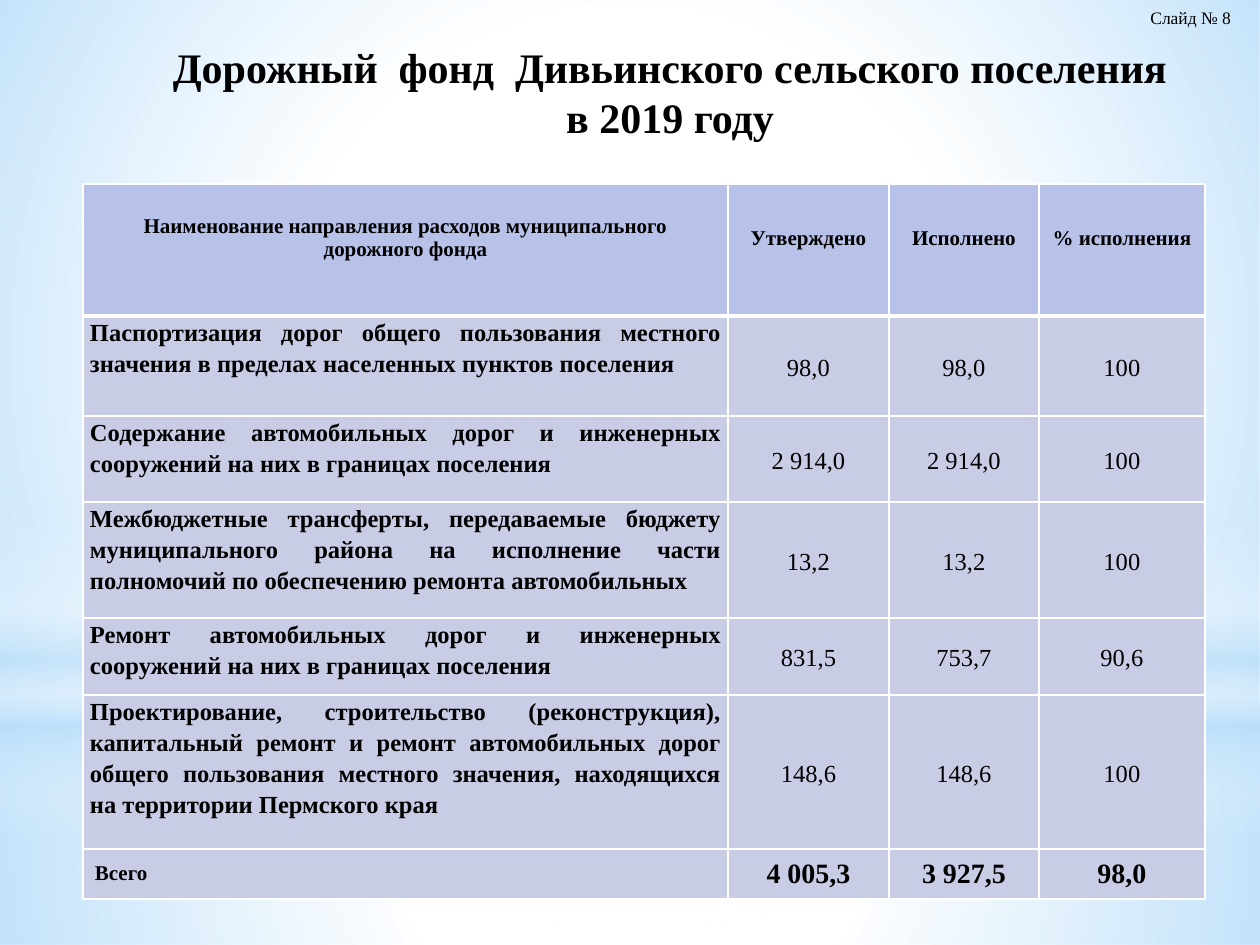
from lxml import etree
from pptx import Presentation
from pptx import util as u
from pptx.dml.color import RGBColor
from pptx.enum import shapes, text
from pptx.oxml import parse_xml
from pptx.oxml.ns import nsdecls

SCALE = 914400 / 126
FONT = "Times New Roman"
WHITE, SKY, BLACK = "FFFFFF", "B4DCFA", "000000"
HEAD_FILL, BODY_FILL = "B8C2E9", "C8CDE5"
RECT, OVAL = shapes.MSO_SHAPE.RECTANGLE, shapes.MSO_SHAPE.OVAL
CENTER, LEFT, JUSTIFY = text.PP_ALIGN.CENTER, text.PP_ALIGN.LEFT, text.PP_ALIGN.JUSTIFY

CIRCLE = '<a:path path="circle"><a:fillToRect l="50000" t="50000" r="50000" b="50000"/></a:path>'
DOWN = '<a:lin ang="5400000" scaled="0"/>'

BACKDROP = [
    (RECT, (0, 703, 1260, 242), CIRCLE, [(0, WHITE, 91), (37, WHITE, 76), (100, SKY, 79)]),
    (RECT, (0, 0, 1260, 703), CIRCLE, [(0, WHITE, 89), (48, WHITE, 62), (100, SKY, 79)]),
    (RECT, (0, 519, 1260, 315), DOWN, [(0, WHITE, 0), (29, WHITE, 30), (45, SKY, 40),
                                       (55, WHITE, 26), (65, SKY, 60), (100, WHITE, 0)]),
    (OVAL, (0, 220, 1260, 703), CIRCLE, [(0, WHITE, 100), (56, WHITE, 0)]),
]

CAPTIONS = [
    ("Дорожный  фонд  Дивьинского сельского поселения в 2019 году",
     (144, 35, 1052, 115), 24, True, CENTER),
    ("Слайд № 8", (1138, 1, 122, 34), 10, False, LEFT),
]

HEADER = ("Наименование направления расходов муниципального дорожного фонда",
          "Утверждено", "Исполнено", "% исполнения")
EXPENSES = [
    ("Паспортизация дорог общего пользования местного значения в пределах "
     "населенных пунктов поселения", "98,0", "98,0", "100"),
    ("Содержание автомобильных дорог и инженерных сооружений на них в границах поселения",
     "2 914,0", "2 914,0", "100"),
    ("Межбюджетные трансферты, передаваемые бюджету муниципального района на исполнение "
     "части полномочий по обеспечению ремонта автомобильных", "13,2", "13,2", "100"),
    ("Ремонт автомобильных дорог и инженерных сооружений на них в границах поселения",
     "831,5", "753,7", "90,6"),
    ("Проектирование, строительство (реконструкция), капитальный ремонт и ремонт "
     "автомобильных дорог общего пользования местного значения, находящихся на территории "
     "Пермского края", "148,6", "148,6", "100"),
]
TOTAL = ("Всего", "4 005,3", "3 927,5", "98,0")
TABLE_LEFT, TABLE_TOP = 83, 184
COLUMNS = [645, 161, 150, 166]
ROWS = [132, 100, 86, 116, 77, 154, 50]


def px(n):
    return u.Emu(round(n * SCALE))


def color(value):
    return RGBColor.from_string(value)


def style(paragraph, size, bold, align):
    paragraph.alignment = align
    font = paragraph.font
    font.name, font.size, font.bold = FONT, u.Pt(size), bold
    font.color.rgb = color(BLACK)


def add_glow(slide, kind, box, direction, stops):
    glow = slide.shapes.add_shape(kind, *map(px, box))
    glow.shadow.inherit = False
    glow.line.fill.background()
    stop_xml = "".join(
        f'<a:gs pos="{at * 1000}"><a:srgbClr val="{value}"><a:alpha val="{alpha * 1000}"/>'
        f'</a:srgbClr></a:gs>' for at, value, alpha in stops)
    gradient = parse_xml(f'<a:gradFill {nsdecls("a")} rotWithShape="1">'
                         f'<a:gsLst>{stop_xml}</a:gsLst>{direction}</a:gradFill>')
    glow.fill.background()
    properties = glow.element.spPr
    properties.replace(properties.find("{*}noFill"), gradient)


def add_caption(slide, words, box, size, bold, align):
    frame = slide.shapes.add_textbox(*map(px, box)).text_frame
    frame.word_wrap = True
    frame.text = words
    style(frame.paragraphs[0], size, bold, align)


def add_borders(cell, top, bottom):
    widths = {"lnL": 1, "lnR": 1, "lnT": top, "lnB": bottom}
    for place, (side, width) in enumerate(widths.items()):
        border = parse_xml(f'<a:{side} {nsdecls("a")} w="{width * 12700}"><a:solidFill>'
                           f'<a:srgbClr val="{WHITE}"/></a:solidFill></a:{side}>')
        cell._tc.get_or_add_tcPr().insert(place, border)


def fill_cell(cell, words, row, column):
    header, total = row == 0, row == len(ROWS) - 1
    name = column == 0
    cell.text = words
    cell.fill.solid()
    cell.fill.fore_color.rgb = color(HEAD_FILL if header else BODY_FILL)
    add_borders(cell, 3 if row == 1 else 1, 3 if header else 1)
    paragraph = cell.text_frame.paragraphs[0]
    cell.vertical_anchor = text.MSO_ANCHOR.MIDDLE
    side, top, bottom = 12, 6, 6
    if header:
        size, bold, align, bottom = 12, True, CENTER, 30
    elif total:
        size, bold, align = (12, True, LEFT) if name else (16, True, CENTER)
    else:
        size, bold, align = 14, name, JUSTIFY if name else CENTER
        side, top, bottom = 7, 0, 0
        paragraph.line_spacing = 1.15
        if name:
            cell.vertical_anchor = text.MSO_ANCHOR.TOP
    cell.margin_left = cell.margin_right = px(side)
    cell.margin_top, cell.margin_bottom = px(top), px(bottom)
    style(paragraph, size, bold, align)


def add_fund_table(slide):
    fund = slide.shapes.add_table(len(ROWS), len(COLUMNS), px(TABLE_LEFT), px(TABLE_TOP),
                                  px(sum(COLUMNS)), px(sum(ROWS))).table
    for column, width in zip(fund.columns, COLUMNS):
        column.width = px(width)
    for row, height in zip(fund.rows, ROWS):
        row.height = px(height)
    for r, entries in enumerate([HEADER, *EXPENSES, TOTAL]):
        for c, words in enumerate(entries):
            fill_cell(fund.cell(r, c), words, r, c)


def main():
    deck = Presentation()
    deck.slide_width, deck.slide_height = px(1260), px(945)
    slide = deck.slides.add_slide(deck.slide_layouts[6])
    for glow in BACKDROP:
        add_glow(slide, *glow)
    add_fund_table(slide)
    for caption in CAPTIONS:
        add_caption(slide, *caption)
    deck.save("out.pptx")


if __name__ == "__main__":
    main()
